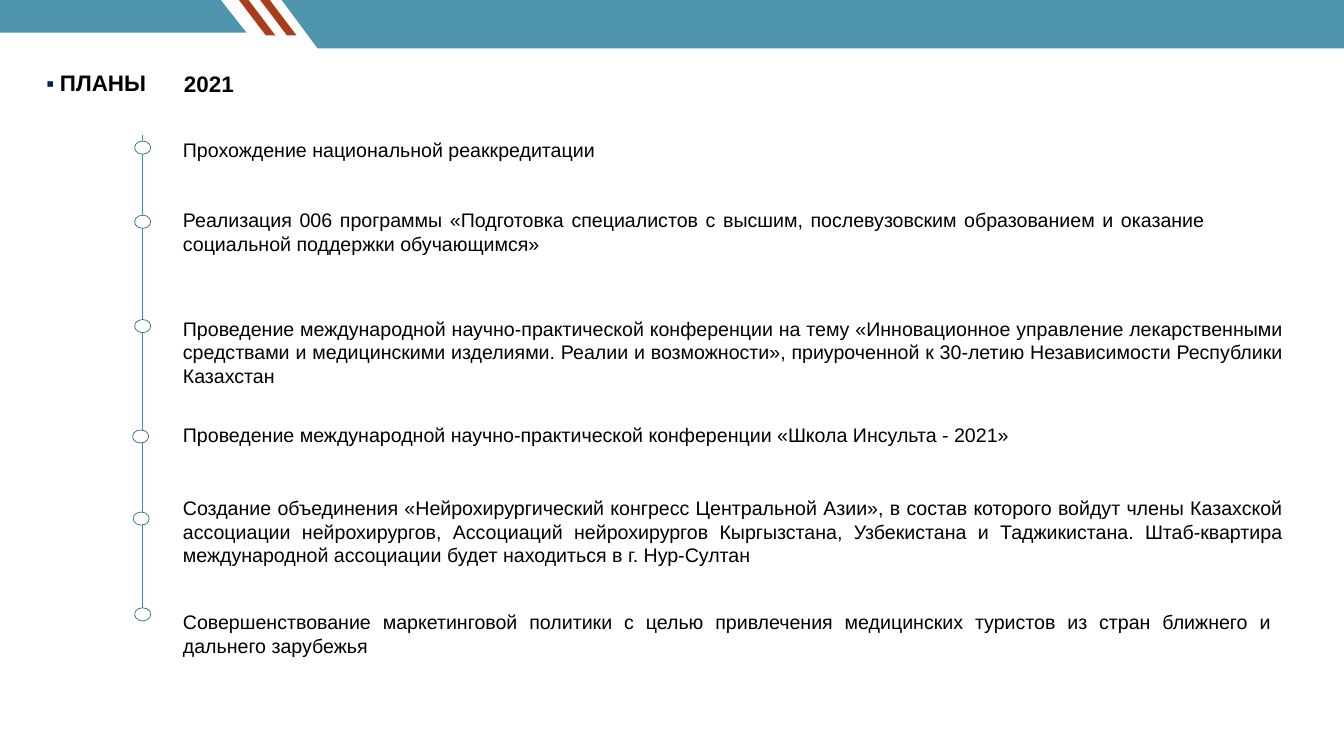
from dataclasses import dataclass

from lxml.etree import SubElement
from pptx import Presentation
from pptx.dml.color import RGBColor
from pptx.enum.shapes import MSO_CONNECTOR as Connector, MSO_SHAPE as Shape
from pptx.enum.text import MSO_ANCHOR as Anchor, MSO_AUTO_SIZE as AutoSize, PP_ALIGN as Align
from pptx.oxml.ns import qn
from pptx.util import Pt

EMU_PER_PX = 9144
FONT = "Arial"
TEAL, RUST, BLUE, STEEL = "5095AE", "AB3C19", "368DBE", "306684"
NAVY, BLACK, WHITE = "002060", "000000", "FFFFFF"
TEXT_LEFT = 353
AXIS_X, AXIS_TOP, AXIS_BOTTOM = 283, 268, 1206
DOT_WIDTH, DOT_HEIGHT = 32, 26


@dataclass
class Band:
    points: list[tuple[int, int]]
    color: str


@dataclass
class Plan:
    text: str
    top: int
    width: int
    height: int
    dot_top: int
    dot_left: int = 267


def stripe(left: int) -> Band:
    return Band([(left, 0), (left + 19, 0), (left + 72, 70), (left + 53, 70)], RUST)


BANDS = [
    Band([(2666, -5), (555, -5), (630, 96), (2666, 96)], TEAL),
    Band([(434, -5), (0, -5), (0, 65), (489, 65)], TEAL),
    stripe(474),
    stripe(516),
]

PLANS = [
    Plan("Прохождение национальной реаккредитации", 268, 1137, 104, 280),
    Plan("Реализация 006 программы «Подготовка специалистов с высшим, послевузовским "
         "образованием и оказание социальной поддержки обучающимся»", 408, 2045, 151, 427),
    Plan("Проведение международной научно-практической конференции на тему "
         "«Инновационное управление лекарственными средствами и медицинскими изделиями. "
         "Реалии и возможности», приуроченной к 30-летию Независимости Республики Казахстан",
         623, 2200, 199, 634),
    Plan("Проведение международной научно-практической конференции "
         "«Школа Инсульта - 2021»", 835, 2200, 57, 853, 263),
    Plan("Создание объединения «Нейрохирургический конгресс Центральной Азии», в состав "
         "которого войдут члены Казахской ассоциации нейрохирургов, Ассоциаций "
         "нейрохирургов Кыргызстана, Узбекистана и Таджикистана. Штаб-квартира "
         "международной ассоциации будет находиться в г. Нур-Султан",
         979, 2200, 151, 1016, 264),
    Plan("Совершенствование маркетинговой политики с целью привлечения медицинских "
         "туристов из стран ближнего и дальнего зарубежья", 1206, 2177, 104, 1206),
]


def px(value: int) -> int:
    return value * EMU_PER_PX


def rgb(color: str) -> RGBColor:
    return RGBColor.from_string(color)


def write(box, text: str, size: int, bold: bool = False, align=Align.LEFT):
    frame = box.text_frame
    frame.text = text
    frame.word_wrap = True
    frame.auto_size = AutoSize.NONE
    frame.vertical_anchor = Anchor.TOP
    para = frame.paragraphs[0]
    para.alignment = align
    for span in para.runs:
        span.font.name = FONT
        span.font.size = Pt(size)
        span.font.bold = bold
        span.font.color.rgb = rgb(BLACK)
    return para


def add_text(page, text: str, left: int, top: int, width: int, height: int,
             size: int, bold: bool = False, align=Align.LEFT) -> None:
    box = page.shapes.add_textbox(px(left), px(top), px(width), px(height))
    write(box, text, size, bold, align)


def draw_band(page, band: Band) -> None:
    start, *rest = band.points
    builder = page.shapes.build_freeform(*start, scale=EMU_PER_PX)
    builder.add_line_segments(rest, close=True)
    shape = builder.convert_to_shape()
    shape.shadow.inherit = False
    shape.fill.solid()
    shape.fill.fore_color.rgb = rgb(band.color)
    shape.line.fill.background()


def draw_axis(page) -> None:
    axis = page.shapes.add_connector(
        Connector.STRAIGHT, px(AXIS_X), px(AXIS_TOP), px(AXIS_X), px(AXIS_BOTTOM))
    axis.line.color.rgb = rgb(BLUE)
    axis.line.width = Pt(0.75)
    SubElement(axis._element.spPr, qn("a:effectLst"))


def draw_plan(page, plan: Plan) -> None:
    add_text(page, plan.text, TEXT_LEFT, plan.top, plan.width, plan.height,
             28, align=Align.JUSTIFY)
    dot = page.shapes.add_shape(
        Shape.OVAL, px(plan.dot_left), px(plan.dot_top), px(DOT_WIDTH), px(DOT_HEIGHT))
    dot.shadow.inherit = False
    dot.fill.solid()
    dot.fill.fore_color.rgb = rgb(WHITE)
    dot.line.color.rgb = rgb(STEEL)
    dot.line.width = Pt(1)


def draw_title(page, text: str) -> None:
    title = page.shapes.title
    title.left, title.top, title.width, title.height = map(px, (82, 139, 281, 59))
    para = write(title, text, 32, bold=True)
    para.line_spacing = 0.9
    properties = para._p.get_or_add_pPr()
    properties.set("marL", str(px(27)))
    properties.set("indent", str(px(-27)))
    bullet_color = SubElement(properties, qn("a:buClr"))
    SubElement(bullet_color, qn("a:srgbClr"), val=NAVY)
    SubElement(properties, qn("a:buFont"), typeface=FONT)
    SubElement(properties, qn("a:buChar"), char="▪")


def main() -> None:
    deck = Presentation()
    deck.slide_width, deck.slide_height = px(2666), px(1500)
    page = deck.slides.add_slide(deck.slide_layouts[5])
    for band in BANDS:
        draw_band(page, band)
    draw_axis(page)
    for plan in PLANS:
        draw_plan(page, plan)
    draw_title(page, "ПЛАНЫ")
    add_text(page, "2021", 355, 134, 120, 64, 32, bold=True)
    deck.save("out.pptx")


if __name__ == "__main__":
    main()
